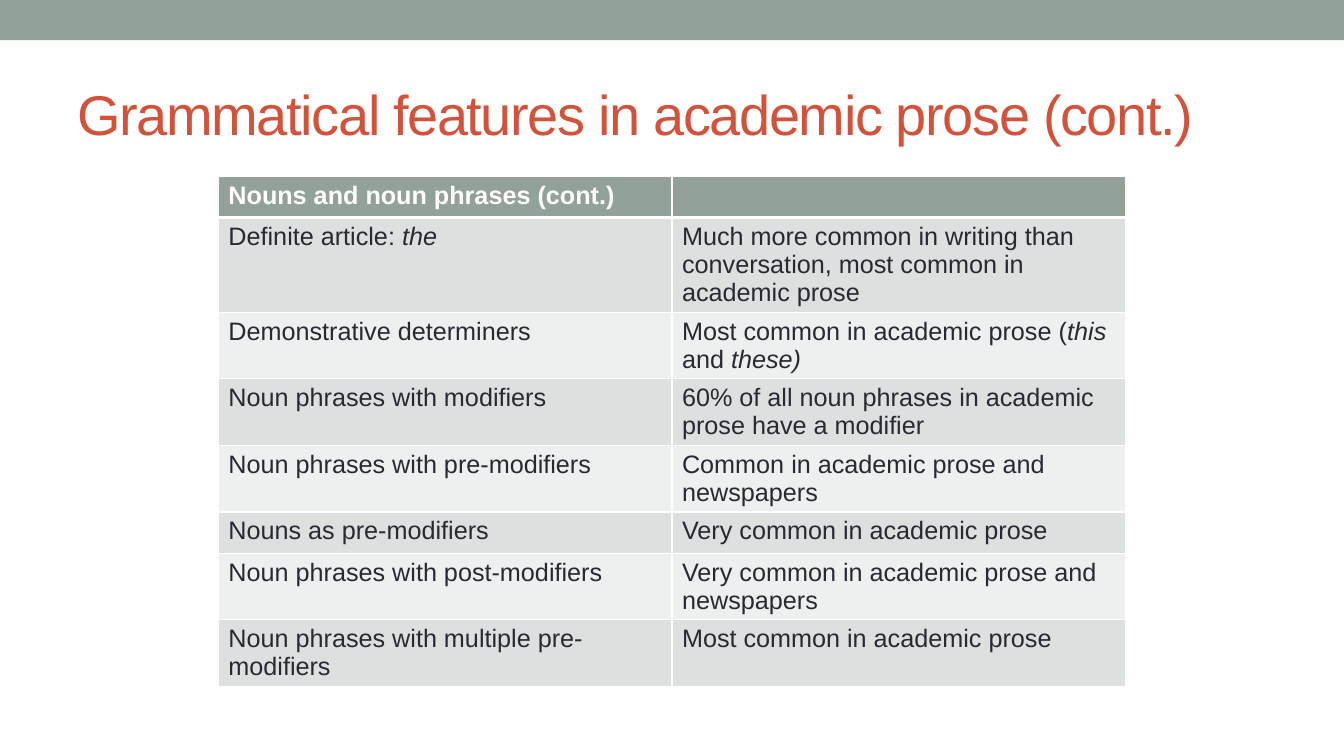
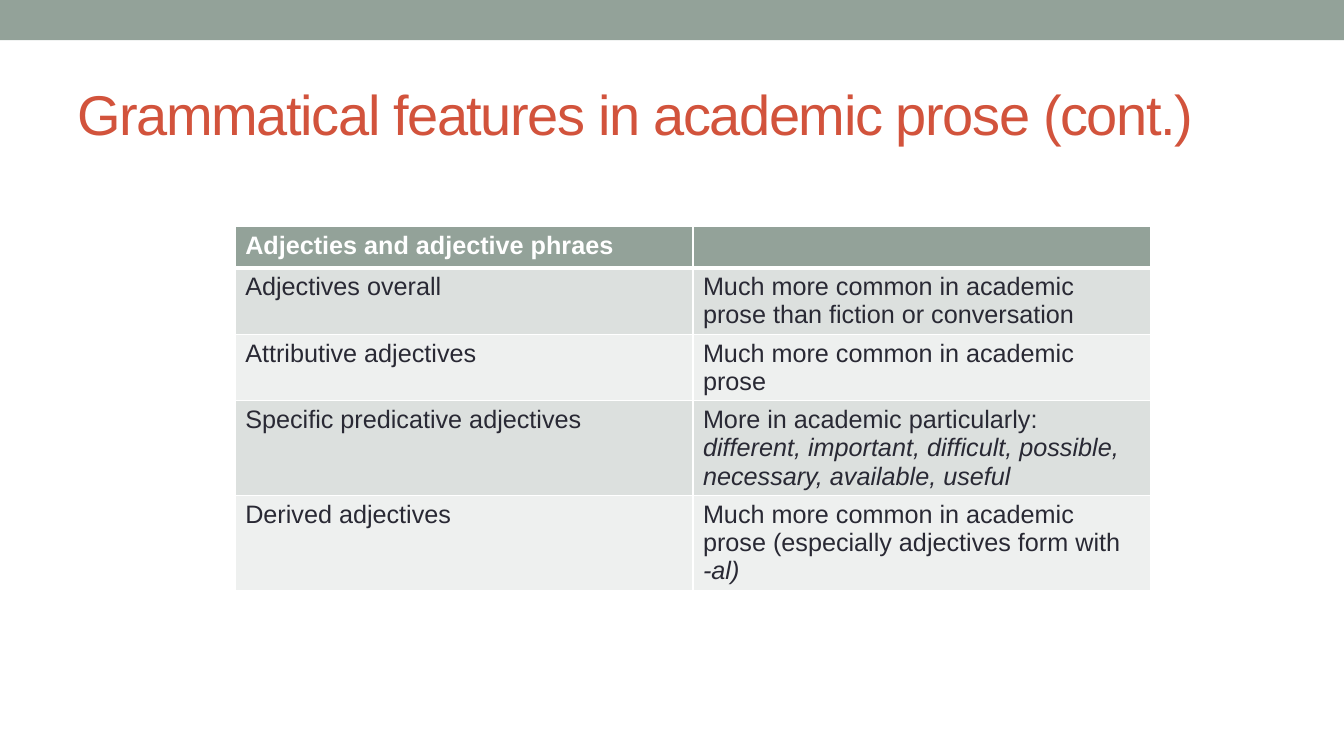
from lxml import etree
from pptx import Presentation
from pptx.dml.color import RGBColor
from pptx.enum.shapes import MSO_SHAPE
from pptx.enum.text import MSO_ANCHOR, PP_ALIGN
from pptx.oxml.ns import qn
from pptx.util import Inches, Pt

RECTANGLE = MSO_SHAPE.RECTANGLE
MIDDLE = MSO_ANCHOR.MIDDLE
LEFT = PP_ALIGN.LEFT

TITLE_ONLY = 5
FONT = "Arial"
SAGE, RUST, INK, WHITE = "93A299", "D2533C", "292934", "FFFFFF"
BANDS = ("DCE0DE", "EEF0EF")

TITLE = "Grammatical features in academic prose (cont.)"

# Asterisks enclose italic words.
NOUN_ROWS = [
    ("Nouns and noun phrases (cont.)", ""),
    ("Definite article: *the*",
     "Much more common in writing than conversation, most common in academic prose"),
    ("Demonstrative determiners",
     "Most common in academic prose (*this* and *these)*"),
    ("Noun phrases with modifiers",
     "60% of all noun phrases in academic prose have a modifier"),
    ("Noun phrases with pre-modifiers", "Common in academic prose and newspapers"),
    ("Nouns as pre-modifiers", "Very common in academic prose"),
    ("Noun phrases with post-modifiers",
     "Very common in academic prose and newspapers"),
    ("Noun phrases with multiple pre-modifiers", "Most common in academic prose"),
]
ADJECTIVE_ROWS = [
    ("Adjecties and adjective phraes", ""),
    ("Adjectives overall",
     "Much more common in academic prose than fiction or conversation"),
    ("Attributive adjectives", "Much more common in academic prose"),
    ("Specific predicative adjectives",
     "More in academic particularly: *different, important, difficult, possible, "
     "necessary, available, useful*"),
    ("Derived adjectives",
     "Much more common in academic prose (especially adjectives form with  *-al)*"),
]


def color(hex_string):
    return RGBColor.from_string(hex_string)


def grid(units):
    """Convert grid units to a length; the slide is 80 columns by 45 rows."""
    return Inches(units / 6)


def write(text_frame, text, size=18, ink=INK, bold=False, align=LEFT):
    """Fill the first paragraph, setting words between asterisks in italics."""
    paragraph = text_frame.paragraphs[0]
    paragraph.alignment = align
    for index, part in enumerate(text.split("*")):
        if part:
            run = paragraph.add_run()
            run.text = part
            font = run.font
            font.name, font.size = FONT, Pt(size)
            font.bold, font.italic = bold, index % 2 == 1
            font.color.rgb = color(ink)


def add_borders(cell_properties, top, bottom):
    """Draw white cell borders; top and bottom are widths in points."""
    widths = {"a:lnL": 1, "a:lnR": 1, "a:lnT": top, "a:lnB": bottom}
    for position, (tag, width) in enumerate(widths.items()):
        line = etree.Element(qn(tag), w=str(Pt(width)))
        fill = etree.SubElement(line, qn("a:solidFill"))
        etree.SubElement(fill, qn("a:srgbClr"), val=WHITE)
        cell_properties.insert(position, line)


class Deck:
    def __init__(self):
        self.presentation = Presentation()
        self.presentation.slide_width = grid(80)
        self.presentation.slide_height = grid(45)
        self.layout = self.presentation.slide_layouts[TITLE_ONLY]
        self.slide = None

    def add_slide(self, title):
        self.slide = self.presentation.slides.add_slide(self.layout)
        self.add_band()
        self.format_title(title)

    def add_band(self):
        band = self.slide.shapes.add_shape(RECTANGLE, 0, 0, grid(80), grid(2.4))
        band.shadow.inherit = False
        band.fill.solid()
        band.fill.fore_color.rgb = color(SAGE)
        band.line.fill.background()

    def format_title(self, text):
        title = self.slide.shapes.title
        title.left, title.top = grid(4), grid(3.5)
        title.width, title.height = grid(72), grid(6.5)
        title.text_frame.vertical_anchor = MIDDLE
        write(title.text_frame, text, size=40, ink=RUST)
        for properties in title.element.iter(qn("a:rPr")):
            properties.set("spc", "-100")

    def add_table(self, rows, left, top, width, row_height):
        """Add a banded table whose first row is the header."""
        frame = self.slide.shapes.add_table(
            len(rows), len(rows[0]), grid(left), grid(top),
            grid(width), grid(row_height * len(rows)))
        for row_index, texts in enumerate(rows):
            header = row_index == 0
            fill = SAGE if header else BANDS[(row_index - 1) % 2]
            for column_index, text in enumerate(texts):
                cell = frame.table.cell(row_index, column_index)
                cell.fill.solid()
                cell.fill.fore_color.rgb = color(fill)
                write(cell.text_frame, text, ink=WHITE if header else INK,
                      bold=header)
        for row_index, row in enumerate(frame.element.iter(qn("a:tr"))):
            for cell_properties in row.iter(qn("a:tcPr")):
                add_borders(cell_properties, top=3 if row_index == 1 else 1,
                            bottom=3 if row_index == 0 else 1)


def main():
    deck = Deck()
    deck.add_slide(TITLE)
    deck.add_table(NOUN_ROWS, left=13, top=10.5, width=54, row_height=2.45)
    deck.add_slide(TITLE)
    deck.add_table(ADJECTIVE_ROWS, left=14, top=13.5, width=54.5, row_height=2)
    deck.presentation.save("out.pptx")


if __name__ == "__main__":
    main()
